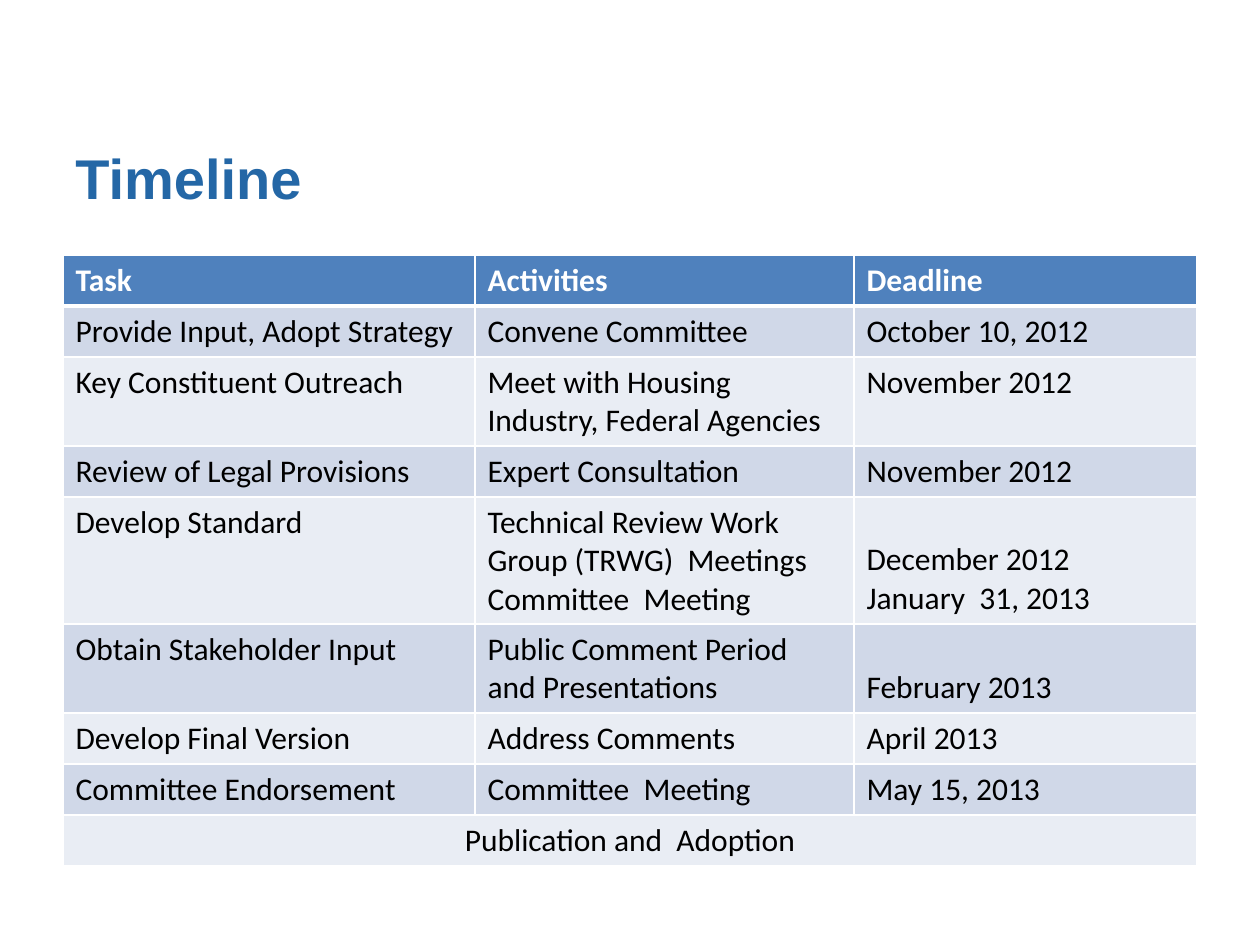
from lxml.etree import SubElement
from pptx import Presentation
from pptx.dml.color import RGBColor
from pptx.enum.text import MSO_ANCHOR, PP_ALIGN
from pptx.oxml.ns import qn
from pptx.util import Emu, Pt

BLUE = RGBColor(0x24, 0x67, 0xA6)
HEADER = RGBColor(0x4F, 0x81, 0xBD)
DARK_BAND = RGBColor(0xD0, 0xD8, 0xE8)
LIGHT_BAND = RGBColor(0xE9, 0xED, 0xF4)
WHITE = RGBColor(0xFF, 0xFF, 0xFF)
BLACK = RGBColor(0x00, 0x00, 0x00)

COLUMN_WIDTHS = [412, 379, 343]
LINE_HEIGHT = 38
ROW_PADDING = 13
ROWS = [
    (1, ["Task", "Activities", "Deadline"]),
    (1, ["Provide Input, Adopt Strategy", "Convene Committee", "October 10, 2012"]),
    (2, ["Key Constituent Outreach", "Meet with Housing Industry, Federal Agencies", "November 2012"]),
    (1, ["Review of Legal Provisions", "Expert Consultation", "November 2012"]),
    (3, ["Develop Standard", "Technical Review Work Group (TRWG)  Meetings\nCommittee  Meeting",
         "December 2012\nJanuary  31, 2013"]),
    (2, ["Obtain Stakeholder Input", "Public Comment Period and Presentations", "February 2013"]),
    (1, ["Develop Final Version", "Address Comments", "April 2013"]),
    (1, ["Committee Endorsement", "Committee  Meeting", "May 15, 2013"]),
    (1, ["Publication and  Adoption", "", ""]),
]
BOTTOM_ALIGNED = {(4, 2), (5, 2)}


def px(length):
    """Turn pixels into EMU."""
    return Emu(round(length * 914400 / 126))


def add_text(frame, text, font_name, size, color, bold, alignment=PP_ALIGN.LEFT):
    """Write one paragraph with one run for each line of text."""
    for index, line in enumerate(text.split("\n")):
        paragraph = frame.paragraphs[0] if index == 0 else frame.add_paragraph()
        paragraph.alignment = alignment
        run = paragraph.add_run()
        run.text = line
        run.font.name = font_name
        run.font.size = Pt(size)
        run.font.color.rgb = color
        run.font.bold = bold


def add_title(slide, text):
    """Add the slide heading."""
    shape = slide.shapes.add_textbox(px(63), px(134), px(1134), px(87))
    frame = shape.text_frame
    frame.word_wrap = True
    frame.vertical_anchor = MSO_ANCHOR.MIDDLE
    add_text(frame, text, "Arial", 32, BLUE, True)


def set_borders(cell, widths):
    """Draw white borders, with widths in points by side."""
    properties = cell._tc.get_or_add_tcPr()
    for index, (side, width) in enumerate(widths.items()):
        line = SubElement(properties, qn(f"a:ln{side}"), w=str(Pt(width)))
        fill = SubElement(line, qn("a:solidFill"))
        SubElement(fill, qn("a:srgbClr"), val=str(WHITE))
        properties.insert(index, line)


def fill_cell(cell, text, row_index, column_index):
    """Style one cell by its row and write its text."""
    is_header = row_index == 0
    band = DARK_BAND if row_index % 2 else LIGHT_BAND
    cell.fill.solid()
    cell.fill.fore_color.rgb = HEADER if is_header else band
    set_borders(cell, {"L": 1, "R": 1, "T": 3 if row_index == 1 else 1, "B": 3 if is_header else 1})
    if (row_index, column_index) in BOTTOM_ALIGNED:
        cell.vertical_anchor = MSO_ANCHOR.BOTTOM
    if text:
        alignment = PP_ALIGN.CENTER if cell.is_merge_origin else PP_ALIGN.LEFT
        add_text(cell.text_frame, text, "Calibri", 18, WHITE if is_header else BLACK, is_header, alignment)


def add_timeline_table(slide):
    """Add the table of tasks, activities and deadlines."""
    heights = [lines * LINE_HEIGHT + ROW_PADDING for lines, _ in ROWS]
    frame = slide.shapes.add_table(len(ROWS), len(COLUMN_WIDTHS), px(63), px(255),
                                   px(sum(COLUMN_WIDTHS)), px(sum(heights)))
    table = frame.table
    for column, width in zip(table.columns, COLUMN_WIDTHS):
        column.width = px(width)
    last_row = len(ROWS) - 1
    table.cell(last_row, 0).merge(table.cell(last_row, len(COLUMN_WIDTHS) - 1))
    for row_index, (_, texts) in enumerate(ROWS):
        table.rows[row_index].height = px(heights[row_index])
        for column_index, text in enumerate(texts):
            fill_cell(table.cell(row_index, column_index), text, row_index, column_index)


def main():
    """Build and save the timeline slide."""
    presentation = Presentation()
    presentation.slide_width = px(1260)
    presentation.slide_height = px(945)
    slide = presentation.slides.add_slide(presentation.slide_layouts[6])
    add_title(slide, "Timeline")
    add_timeline_table(slide)
    presentation.save("out.pptx")


if __name__ == "__main__":
    main()
